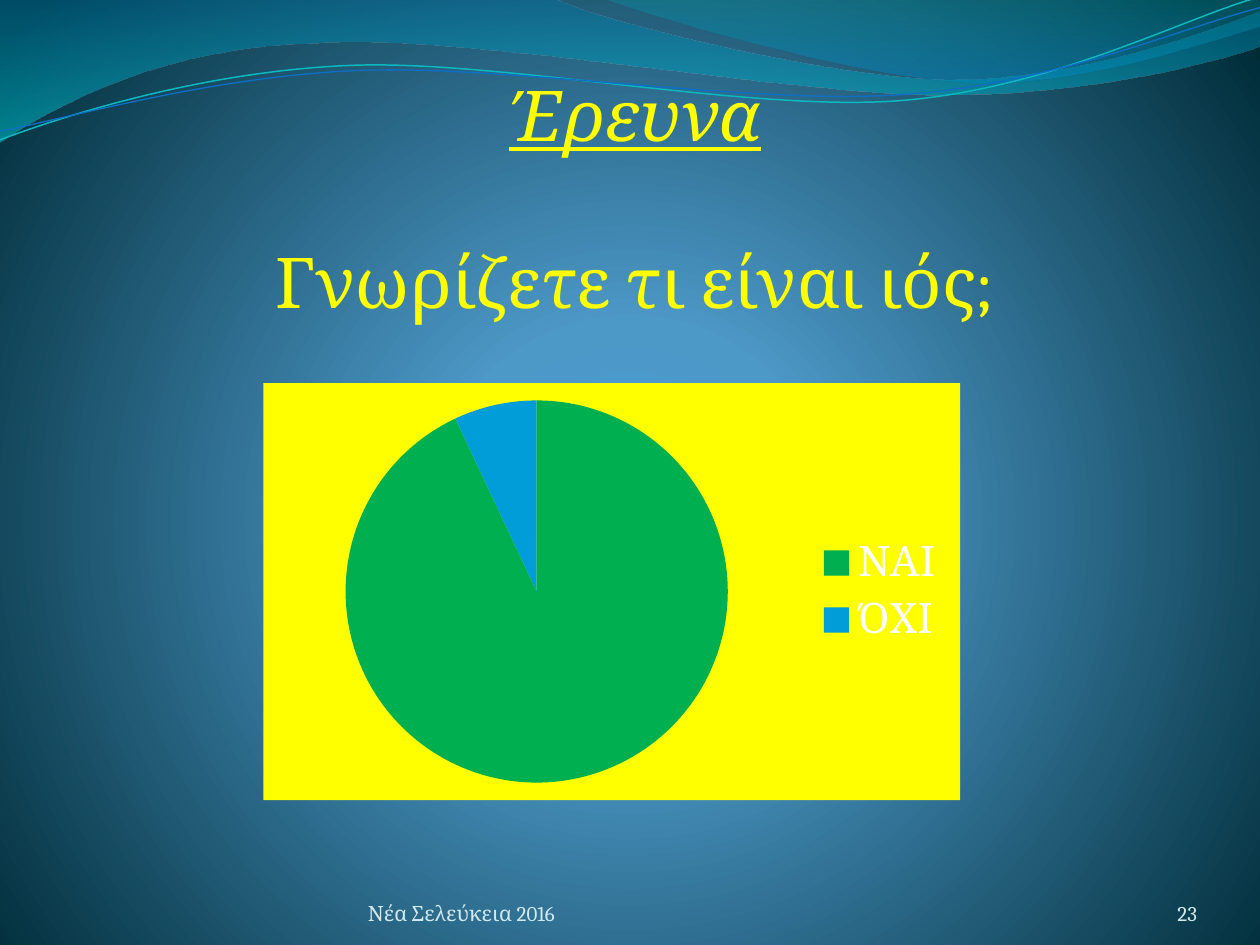
from dataclasses import dataclass
from math import cos, radians, sin

from pptx import Presentation
from pptx.chart.data import CategoryChartData
from pptx.dml.color import RGBColor
from pptx.enum.chart import XL_CHART_TYPE, XL_LEGEND_POSITION
from pptx.enum.text import MSO_ANCHOR, MSO_AUTO_SIZE, PP_ALIGN
from pptx.oxml import parse_xml
from pptx.oxml.ns import nsdecls, qn
from pptx.util import Inches, Pt


@dataclass(frozen=True)
class Theme:
    font: str = "Cambria"
    yellow: str = "FFFF00"
    green: str = "00B050"
    blue: str = "009DD9"
    white: str = "FFFFFF"
    footer: str = "D1EAEE"
    teal_line: str = "0AB8BF"
    blue_line: str = "0F6FC6"
    # Gradient stops: position %, colour, opacity %
    backdrop: tuple = ((0, "4AA0D6", 100), (25, "4C98C7", 100), (100, "002C38", 100))
    wide_wave: tuple = ((0, "0074A1", 45), (100, "00C6CF", 55))
    right_wave: tuple = ((0, "00A1A9", 30), (80, "008BBF", 45))
    title_size: int = 40
    blank_line: int = 47
    legend_size: int = 24
    footer_size: int = 12


THEME = Theme()
LINEAR_DOWN = '<a:lin ang="5400000" scaled="0"/>'
CIRCULAR = ('<a:path path="circle"><a:fillToRect l="10000" t="110000" '
            'r="10000" b="100000"/></a:path>')
CURVE_ROTATION = 357.3

# Each outline is a start point followed by segments: 2 numbers for a straight
# line, 6 for a cubic curve. All are inches from the region's corner.
WIDE_WAVE = [(0, 0), (4.4, -0.01), (4.76, 0.17, 6.64, 0.63, 7.58, 0.63),
             (8.53, 0.63, 9.58, 0.26, 10, 0.09), (10.01, 0.36),
             (9.83, 0.44, 8.7, 0.76, 7.46, 0.75),
             (6.22, 0.75, 3.82, 0.28, 2.57, 0.34),
             (1.29, 0.36, 0.46, 0.83, -0.01, 1.13), (0, 0)]
RIGHT_WAVE = [(4.79, -0.01), (5.09, 0.11, 6.82, 0.62, 7.69, 0.65),
              (8.56, 0.69, 9.61, 0.32, 10, 0.21), (10, 0), (4.79, -0.01)]
TEAL_CURVE = [(0, 1.11), (0.48, 0.93, 1.58, 0.57, 2.77, 0.52),
              (3.95, 0.47, 5.93, 0.89, 7.13, 0.8),
              (8.33, 0.71, 9.38, 0.15, 9.98, -0.02)]
BLUE_CURVE = [(0, 1.04), (0.47, 0.96, 1.64, 0.61, 2.83, 0.56),
              (4.03, 0.51, 5.97, 0.84, 7.17, 0.75),
              (8.36, 0.67, 9.41, 0.21, 10, 0.06)]


def color(value):
    return RGBColor.from_string(value)


def set_gradient(fill, properties, stops, direction):
    """Swap a solid fill inside a properties element for a gradient."""
    fill.solid()
    stop_xml = "".join(
        f'<a:gs pos="{position * 1000}"><a:srgbClr val="{value}">'
        f'<a:alpha val="{opacity * 1000}"/></a:srgbClr></a:gs>'
        for position, value, opacity in stops)
    gradient = parse_xml(f'<a:gradFill {nsdecls("a")} rotWithShape="1">'
                         f'<a:gsLst>{stop_xml}</a:gsLst>{direction}</a:gradFill>')
    solid = properties().find(qn("a:solidFill"))
    solid.getparent().replace(solid, gradient)


def add_outline(slide, origin, box, outline, rotation=0, close=False):
    """Add a curved freeform whose outline is given as it shows after rotation."""
    left, top, width, height = box
    turn = radians(-rotation)

    def local(x, y):
        dx, dy = x - left - width / 2, y - top - height / 2
        return (Inches(dx * cos(turn) - dy * sin(turn) + width / 2),
                Inches(dx * sin(turn) + dy * cos(turn) + height / 2))

    builder = slide.shapes.build_freeform(*local(*outline[0]))
    builder.add_line_segments([local(*segment[-2:]) for segment in outline[1:]], close=close)
    shape = builder.convert_to_shape()
    shape.left, shape.top = origin[0] + Inches(left), origin[1] + Inches(top)
    shape.width, shape.height = Inches(width), Inches(height)
    shape.rotation = rotation
    shape.shadow.inherit = False

    commands = []
    for index, segment in enumerate(outline):
        name = "moveTo" if index == 0 else "lnTo" if len(segment) == 2 else "cubicBezTo"
        points = (local(*pair) for pair in zip(segment[::2], segment[1::2]))
        point_xml = "".join(f'<a:pt x="{x}" y="{y}"/>' for x, y in points)
        commands.append(f"<a:{name}>{point_xml}</a:{name}>")
    if close:
        commands.append("<a:close/>")
    curves = parse_xml(f'<a:path {nsdecls("a")} w="{Inches(width)}" h="{Inches(height)}">'
                       f'{"".join(commands)}</a:path>')
    straight = shape.element.find(".//" + qn("a:path"))
    straight.getparent().replace(straight, curves)
    return shape


def add_waves(slide, left, top):
    origin = (left, top)
    for outline, box, stops in (
            (WIDE_WAVE, (-0.01, -0.01, 10.02, 1.14), THEME.wide_wave),
            (RIGHT_WAVE, (4.79, -0.01, 5.21, 0.7), THEME.right_wave)):
        wave = add_outline(slide, origin, box, outline, close=True)
        wave.line.fill.background()
        set_gradient(wave.fill, lambda: wave.element.spPr, stops, LINEAR_DOWN)
    for outline, box, value, width in (
            (TEAL_CURVE, (-0.02, 0.22, 10.02, 0.71), THEME.teal_line, 0.85),
            (BLUE_CURVE, (-0.02, 0.3, 10.03, 0.58), THEME.blue_line, 0.75)):
        curve = add_outline(slide, origin, box, outline, CURVE_ROTATION)
        curve.fill.background()
        curve.line.color.rgb = color(value)
        curve.line.width = Pt(width)


def style_paragraph(paragraph, size, value, alignment):
    paragraph.alignment = alignment
    paragraph.font.name = THEME.font
    paragraph.font.size = Pt(size)
    paragraph.font.color.rgb = color(value)


def fill_title(title, left, top, width, height):
    title.left, title.top, title.width, title.height = left, top, width, height
    frame = title.text_frame
    frame.text = "Έρευνα\nΓνωρίζετε τι είναι ιός;"
    frame.word_wrap = True
    frame.auto_size = MSO_AUTO_SIZE.NONE
    frame.vertical_anchor = MSO_ANCHOR.TOP
    heading, question = frame.paragraphs
    for paragraph in (heading, question):
        style_paragraph(paragraph, THEME.title_size, THEME.yellow, PP_ALIGN.CENTER)
        paragraph.space_before = Pt(0)
    heading.font.italic = heading.font.underline = True
    question.space_before = Pt(THEME.blank_line)


def add_answer_chart(slide, left, top, width, height):
    data = CategoryChartData()
    data.categories = ["ΝΑΙ", "ΌΧΙ"]
    data.add_series("Series 1", (93, 7))
    chart = slide.shapes.add_chart(XL_CHART_TYPE.PIE, left, top, width, height, data).chart
    chart.has_title = False
    chart.font.name = THEME.font
    chart.font.size = Pt(10)
    chart.font.color.rgb = color(THEME.white)
    chart.has_legend = True
    chart.legend.position = XL_LEGEND_POSITION.RIGHT
    chart.legend.include_in_layout = False
    chart.legend.font.name = THEME.font
    chart.legend.font.size = Pt(THEME.legend_size)
    chart.legend.font.color.rgb = color(THEME.white)
    plot = chart.plots[0]
    plot.vary_by_categories = True
    for index, value in enumerate((THEME.green, THEME.blue)):
        point_format = plot.series[0].points[index].format
        point_format.fill.solid()
        point_format.fill.fore_color.rgb = color(value)
        point_format.line.fill.background()
    chart.element.find(qn("c:chart")).addnext(parse_xml(
        f'<c:spPr {nsdecls("c", "a")}><a:solidFill><a:srgbClr val="{THEME.yellow}"/>'
        '</a:solidFill><a:ln><a:noFill/></a:ln></c:spPr>'))


def add_footer_text(slide, text, left, top, width, height, alignment):
    frame = slide.shapes.add_textbox(left, top, width, height).text_frame
    frame.word_wrap = True
    frame.vertical_anchor = MSO_ANCHOR.BOTTOM
    frame.margin_left = frame.margin_right = frame.margin_top = frame.margin_bottom = 0
    frame.text = text
    style_paragraph(frame.paragraphs[0], THEME.footer_size, THEME.footer, alignment)


def build_survey_slide(presentation):
    slide = presentation.slides.add_slide(presentation.slide_layouts[5])
    set_gradient(slide.background.fill,
                 lambda: slide.element.find(".//" + qn("p:bgPr")),
                 THEME.backdrop, CIRCULAR)
    add_waves(slide, 0, 0)
    title = slide.shapes.title
    fill_title(title, Inches(1.22), Inches(0.52), Inches(7.64), Inches(2.12))
    title.element.getparent().append(title.element)  # in front of the waves
    footer_top, footer_height = Inches(6.95), Inches(0.4)
    add_footer_text(slide, "Νέα Σελεύκεια 2016", Inches(2.92), footer_top,
                    Inches(3.67), footer_height, PP_ALIGN.LEFT)
    add_answer_chart(slide, Inches(2.09), Inches(3.04), Inches(5.53), Inches(3.31))
    add_footer_text(slide, "23", Inches(8.67), footer_top,
                    Inches(0.83), footer_height, PP_ALIGN.RIGHT)


def main():
    presentation = Presentation()
    presentation.slide_width, presentation.slide_height = Inches(10), Inches(7.5)
    build_survey_slide(presentation)
    presentation.save("out.pptx")


if __name__ == "__main__":
    main()
